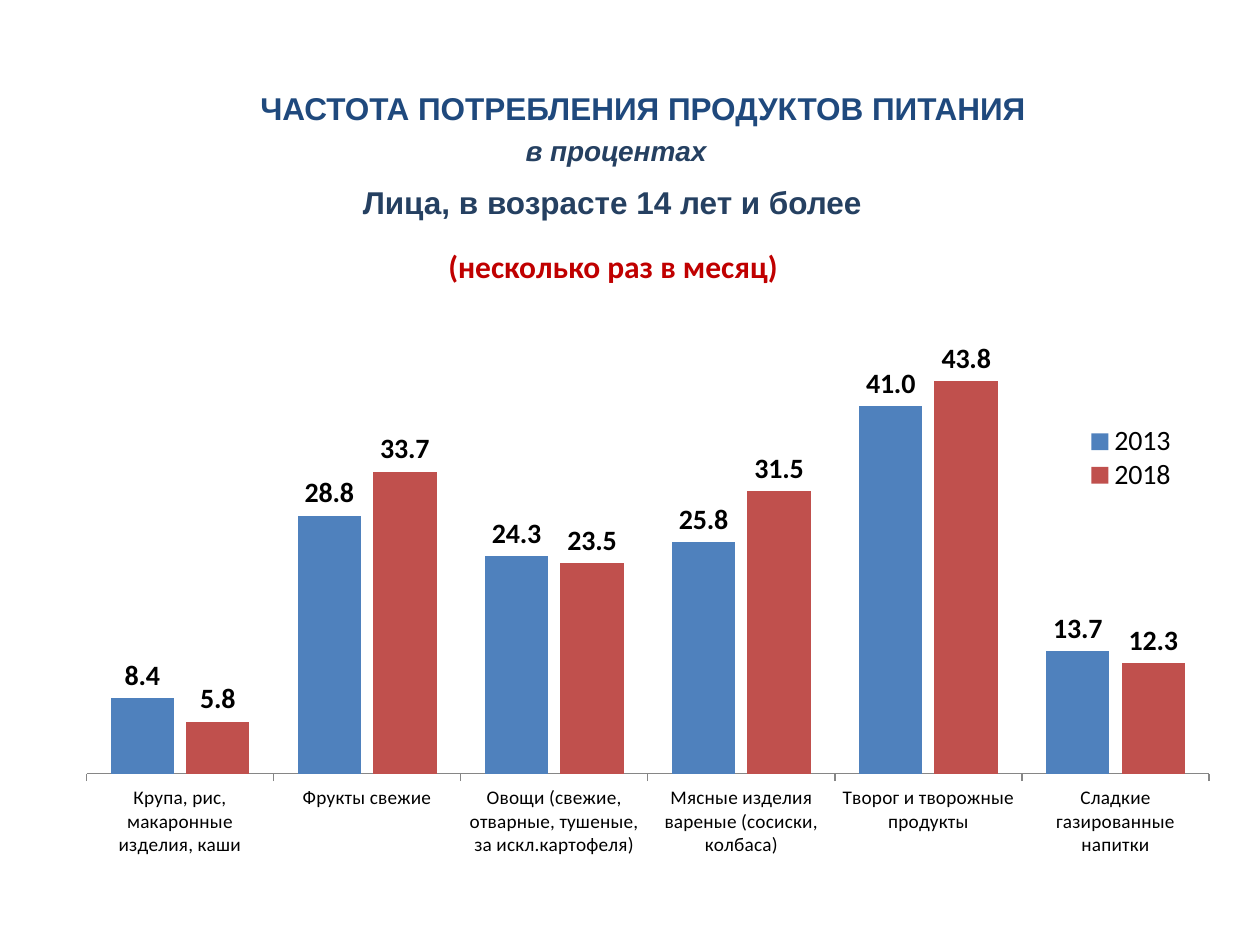
from lxml.etree import SubElement
from pptx import Presentation
from pptx.chart.data import CategoryChartData
from pptx.dml.color import RGBColor
from pptx.enum.chart import (XL_CHART_TYPE, XL_LABEL_POSITION, XL_LEGEND_POSITION,
                             XL_TICK_LABEL_POSITION, XL_TICK_MARK)
from pptx.enum.text import MSO_AUTO_SIZE, PP_ALIGN
from pptx.oxml.ns import qn
from pptx.util import Pt

COLORS = {"title": "1F497D", "navy": "254061", "accent": "C00000", "text": "000000",
          "axis": "868686", "2013": "4F81BD", "2018": "C0504D"}

CATEGORIES = ["Крупа, рис, макаронные изделия, каши", "Фрукты свежие",
              "Овощи (свежие, отварные, тушеные, за искл.картофеля)",
              "Мясные изделия вареные (сосиски, колбаса)",
              "Творог и творожные продукты", "Сладкие газированные напитки"]
SERIES = {"2013": (8.4, 28.8, 24.3, 25.8, 41.0, 13.7),
          "2018": (5.8, 33.7, 23.5, 31.5, 43.8, 12.3)}

HEADINGS = [
    ("ЧАСТОТА ПОТРЕБЛЕНИЯ ПРОДУКТОВ ПИТАНИЯ", (139, 47.5, 457, 29), "title",
     PP_ALIGN.CENTER, {"size": Pt(18), "name": "Arial", "bold": True}),
    ("в процентах", (292.3, 72.7, 119.5, 26.6), "navy",
     PP_ALIGN.CENTER, {"size": Pt(16), "name": "Arial", "bold": True, "italic": True}),
    ("Лица, в возрасте 14 лет и более", (200.2, 100.8, 303, 29), "navy",
     PP_ALIGN.LEFT, {"size": Pt(18), "name": "Arial", "bold": True}),
    ("(несколько раз в месяц)", (249.1, 137.5, 204.5, 29), "accent",
     PP_ALIGN.LEFT, {"size": Pt(18), "name": "Calibri", "bold": True}),
]


class Deck:
    """Holds the style and the current slide."""

    def __init__(self, width, height):
        self.prs = Presentation()
        self.prs.slide_width, self.prs.slide_height = Pt(width), Pt(height)
        self.s = self.prs.slides.add_slide(self.prs.slide_layouts[6])

    def color(self, key):
        return RGBColor.from_string(COLORS[key])

    def apply(self, target, values):
        for name, value in values.items():
            setattr(target, name, value)

    def font(self, font, color, values):
        self.apply(font, values)
        font.color.rgb = self.color(color)

    def text(self, text, box, color, align, values):
        tf = self.s.shapes.add_textbox(*map(Pt, box)).text_frame
        self.apply(tf, {"word_wrap": False, "auto_size": MSO_AUTO_SIZE.SHAPE_TO_FIT_TEXT})
        p = tf.paragraphs[0]
        p.alignment = align
        r = p.add_run()
        r.text = text
        self.font(r.font, color, values)

    def layout(self, element, before, x, y, w, h, target=None):
        for old in element.findall(qn("c:layout")):
            element.remove(old)
        layout = SubElement(element, qn("c:layout"))
        manual = SubElement(layout, qn("c:manualLayout"))
        values = {"layoutTarget": target, "xMode": "edge", "yMode": "edge",
                  "x": x, "y": y, "w": w, "h": h}
        for tag, value in values.items():
            if value is not None:
                SubElement(manual, qn("c:" + tag)).set("val", str(value))
        element.find(qn(before)).addprevious(layout)

    def chart(self, box, categories, series):
        data = CategoryChartData(number_format="0.0")
        data.categories = categories
        for name, values in series.items():
            data.add_series(name, values)
        chart = self.s.shapes.add_chart(
            XL_CHART_TYPE.COLUMN_CLUSTERED, *map(Pt, box), data).chart
        self.apply(chart, {"has_title": False, "has_legend": True})
        self.font(chart.font, "text", {"size": Pt(18), "name": "Calibri"})
        plot = chart.plots[0]
        self.apply(plot, {"gap_width": 76, "overlap": -19, "vary_by_categories": False})
        for ser in plot.series:
            ser.format.fill.solid()
            ser.format.fill.fore_color.rgb = self.color(ser.name)
            labels = ser.data_labels
            self.apply(labels, {"show_value": True, "position": XL_LABEL_POSITION.OUTSIDE_END,
                                "number_format": "0.0", "number_format_is_linked": False})
            self.font(labels.font, "text", {"size": Pt(16), "name": "Calibri", "bold": True})
        self.apply(chart.value_axis, {"visible": False, "has_major_gridlines": False,
                                      "minimum_scale": 0, "maximum_scale": 50})
        axis = chart.category_axis
        self.apply(axis, {"major_tick_mark": XL_TICK_MARK.OUTSIDE,
                          "minor_tick_mark": XL_TICK_MARK.NONE,
                          "tick_label_position": XL_TICK_LABEL_POSITION.NEXT_TO_AXIS})
        self.font(axis.tick_labels.font, "text", {"size": Pt(11), "name": "Calibri"})
        axis.format.line.width = Pt(0.75)
        axis.format.line.color.rgb = self.color("axis")
        legend = chart.legend
        self.apply(legend, {"position": XL_LEGEND_POSITION.RIGHT, "include_in_layout": False})
        self.font(legend.font, "text", {"size": Pt(16), "name": "Calibri"})
        area = chart.element.find(".//" + qn("c:plotArea"))
        self.layout(area, "c:barChart", 0.052, 0.031, 0.933, 0.674, "inner")
        self.layout(chart.element.find(".//" + qn("c:legend")), "c:overlay",
                    0.88, 0.18, 0.08, 0.1)


def main():
    deck = Deck(720, 540)
    deck.chart((13.7, 174.2, 687.6, 380.2), CATEGORIES, SERIES)
    for heading in HEADINGS:
        deck.text(*heading)
    deck.prs.save("out.pptx")


if __name__ == "__main__":
    main()
